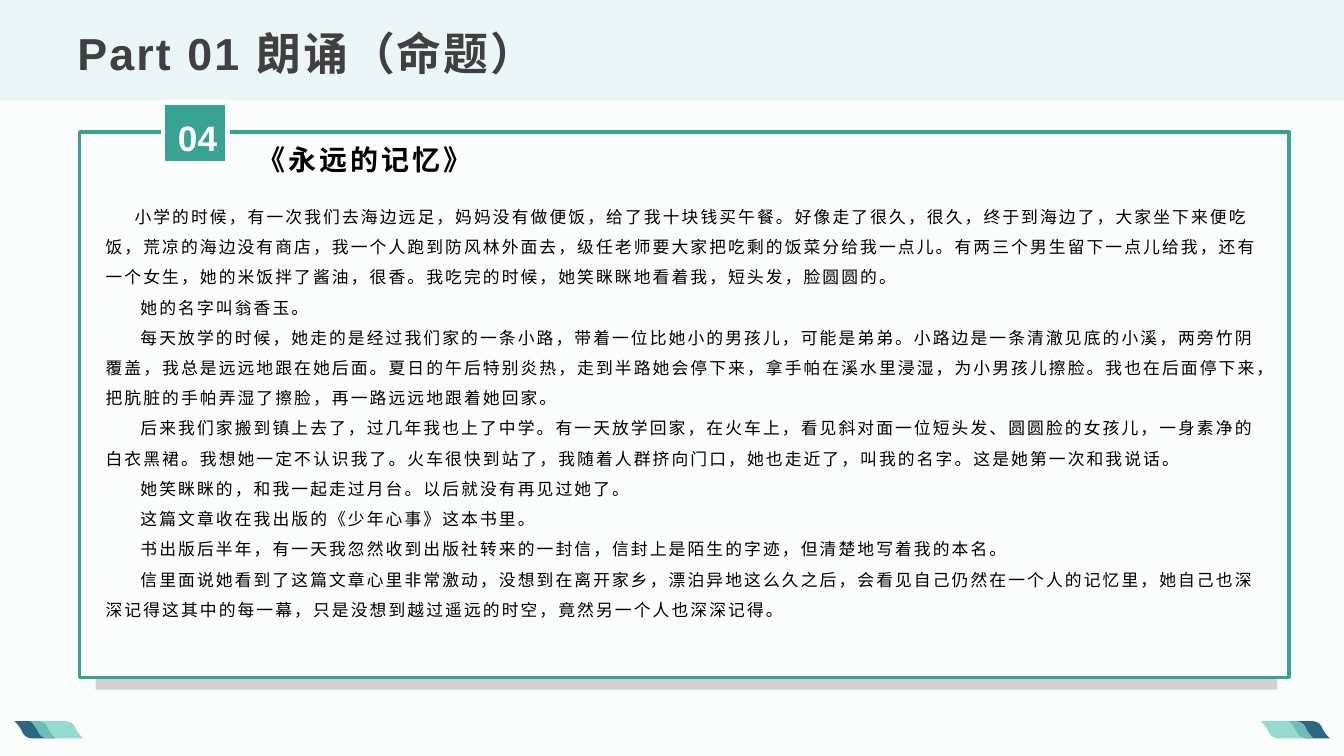
from pptx import Presentation
from pptx.dml.color import RGBColor
from pptx.enum.shapes import MSO_SHAPE
from pptx.enum.text import MSO_ANCHOR, MSO_AUTO_SIZE, PP_ALIGN
from pptx.oxml.ns import qn
from pptx.util import Cm, Pt
from lxml.etree import SubElement

PAPER = RGBColor(0xFB, 0xFC, 0xFC)
BAND = RGBColor(0xED, 0xF6, 0xF7)
SHADE = RGBColor(0xBF, 0xBF, 0xBF)
GREEN = RGBColor(0x38, 0xA2, 0x93)
NAVY = RGBColor(0x2B, 0x67, 0x82)
MINT = RGBColor(0x7D, 0xD2, 0xC6)
WHITE = RGBColor(0xFF, 0xFF, 0xFF)
BLACK = RGBColor(0, 0, 0)
GREY = RGBColor(0x40, 0x40, 0x40)

STORY = [
    "小学的时候，有一次我们去海边远足，妈妈没有做便饭，给了我十块钱买午餐。好像走了很久，很久，终于到海边了，大家坐下来便吃饭，荒凉的海边没有商店，我一个人跑到防风林外面去，级任老师要大家把吃剩的饭菜分给我一点儿。有两三个男生留下一点儿给我，还有一个女生，她的米饭拌了酱油，很香。我吃完的时候，她笑眯眯地看着我，短头发，脸圆圆的。",
    "她的名字叫翁香玉。",
    "每天放学的时候，她走的是经过我们家的一条小路，带着一位比她小的男孩儿，可能是弟弟。小路边是一条清澈见底的小溪，两旁竹阴覆盖，我总是远远地跟在她后面。夏日的午后特别炎热，走到半路她会停下来，拿手帕在溪水里浸湿，为小男孩儿擦脸。我也在后面停下来，把肮脏的手帕弄湿了擦脸，再一路远远地跟着她回家。",
    "后来我们家搬到镇上去了，过几年我也上了中学。有一天放学回家，在火车上，看见斜对面一位短头发、圆圆脸的女孩儿，一身素净的白衣黑裙。我想她一定不认识我了。火车很快到站了，我随着人群挤向门口，她也走近了，叫我的名字。这是她第一次和我说话。",
    "她笑眯眯的，和我一起走过月台。以后就没有再见过她了。",
    "这篇文章收在我出版的《少年心事》这本书里。",
    "书出版后半年，有一天我忽然收到出版社转来的一封信，信封上是陌生的字迹，但清楚地写着我的本名。",
    "信里面说她看到了这篇文章心里非常激动，没想到在离开家乡，漂泊异地这么久之后，会看见自己仍然在一个人的记忆里，她自己也深深记得这其中的每一幕，只是没想到越过遥远的时空，竟然另一个人也深深记得。",
]


def paint(shape, colour, opacity=100, line=None, width=0):
    shape.shadow.inherit = False
    shape.fill.solid()
    shape.fill.fore_color.rgb = colour
    if opacity < 100:
        tint = shape.element.spPr.find(qn("a:solidFill"))[0]
        SubElement(tint, qn("a:alpha"), val=str(opacity * 1000))
    if line is None:
        shape.line.fill.background()
    else:
        shape.line.color.rgb = line
        shape.line.width = Pt(width)


def write(box, paragraphs, at, size, colour, font="Arial", bold=False, tracking=0,
          spacing=1.0, align=PP_ALIGN.LEFT, anchor=MSO_ANCHOR.TOP,
          insets=(0.25, 0.13, 0.25, 0.13), indents=None):
    """Place a box (lengths in cm) and fill it with uniformly formatted paragraphs."""
    box.left, box.top, box.width, box.height = [Cm(value) for value in at]
    frame = box.text_frame
    frame.word_wrap = True
    frame.auto_size = MSO_AUTO_SIZE.NONE
    frame.vertical_anchor = anchor
    (frame.margin_left, frame.margin_top,
     frame.margin_right, frame.margin_bottom) = [Cm(value) for value in insets]
    frame.text = "\n".join(paragraphs)
    for index, para in enumerate(frame.paragraphs):
        para.alignment = align
        para.line_spacing = spacing
        para.space_before = Pt(0)
        if indents:
            layout = para._p.get_or_add_pPr()
            layout.set("marL", "0")
            layout.set("indent", str(Cm(indents[index])))
            SubElement(layout, qn("a:buNone"))
        span = para.runs[0]
        span.font.size = Pt(size)
        span.font.bold = bold
        span.font.color.rgb = colour
        span.font.name = font
        letters = span._r.get_or_add_rPr()
        letters.set("lang", "zh-CN")
        letters.set("spc", str(int(tracking * 100)))
        SubElement(letters, qn("a:ea"), typeface=font)


deck = Presentation()
deck.slide_width, deck.slide_height = Cm(33.87), Cm(19.05)
page = deck.slides.add_slide(deck.slide_layouts[1])
page.background.fill.solid()
page.background.fill.fore_color.rgb = PAPER
title, body = page.placeholders[0], page.placeholders[1]

# Panel with its shade, and the heading band
for at, style in [
    ((2.41, 3.71, 29.77, 13.67), dict(colour=SHADE, opacity=70)),
    ((2.01, 3.33, 30.48, 13.74), dict(colour=PAPER, line=GREEN, width=2.5)),
    ((0, 0, 33.87, 2.54), dict(colour=BAND)),
]:
    block = page.shapes.add_shape(MSO_SHAPE.RECTANGLE, *[Cm(value) for value in at])
    paint(block, **style)

# Corner leaves: an S-shaped edge, and the same edge turned by half a circle
LEAF_HEIGHT = 0.44
EDGE_CURVES = [
    [(-0.46, 0), (-0.3, 0.02), (-0.25, 0.06), (-0.18, 0.21)],
    [(-0.18, 0.21), (-0.1, 0.36), (0, 0.44), (0, 0.44)],
]
STEPS = 8
edge = [EDGE_CURVES[0][0]]
for curve in EDGE_CURVES:
    for step in range(1, STEPS + 1):
        t = step / STEPS
        weights = [(1 - t) ** 3, 3 * t * (1 - t) ** 2, 3 * t * t * (1 - t), t ** 3]
        edge.append(tuple(sum(w * point[axis] for w, point in zip(weights, curve))
                          for axis in (0, 1)))

for left, width, colour, opacity in [
    (0.36, 1.04, NAVY, 100),
    (0.76, 1.34, MINT, 80),
    (32.48, 1.04, NAVY, 100),
    (31.77, 1.34, MINT, 80),
]:
    right_edge = [(width + x, y) for x, y in edge]
    left_edge = [(-x, LEAF_HEIGHT - y) for x, y in edge]
    outline = [(Cm(left + x), Cm(18.17 + y)) for x, y in right_edge + left_edge]
    builder = page.shapes.build_freeform(*outline[0])
    builder.add_line_segments(outline[1:])
    paint(builder.convert_to_shape(), colour, opacity)

# Story, its name and the page title stand in front of the panel
page.shapes.element.append(body.element)
write(body, STORY, (2.41, 4.95, 29.77, 11.58), 12, BLACK, tracking=1.5, spacing=1.5,
      insets=(0.25, 0, 0.25, 0.13), indents=[0.73] + [0.88] * (len(STORY) - 1))

story_name = page.shapes.add_textbox(0, 0, 0, 0)
write(story_name, ["《永远的记忆》"], (5.79, 3.33, 11.43, 1.12), 20, BLACK,
      font="Noto Sans CJK SC", bold=True, tracking=2, spacing=1.2,
      anchor=MSO_ANCHOR.BOTTOM, insets=(0.71, 0.13, 0.25, 0))

page.shapes.element.append(title.element)
write(title, ["Part 01 朗诵（命题）"], (1.7, 0.43, 30.48, 1.7), 32, GREY,
      bold=True, tracking=1.5, anchor=MSO_ANCHOR.BOTTOM)

# Number badge
badge = page.shapes.add_shape(MSO_SHAPE.RECTANGLE, Cm(4.11), Cm(2.59), Cm(1.63), Cm(1.52))
paint(badge, GREEN, line=WHITE, width=3.5)
number = page.shapes.add_textbox(0, 0, 0, 0)
write(number, ["04"], (4.22, 2.59, 1.52, 1.57), 25.2, WHITE, bold=True,
      spacing=1.2, align=PP_ALIGN.CENTER)

deck.save("out.pptx")
